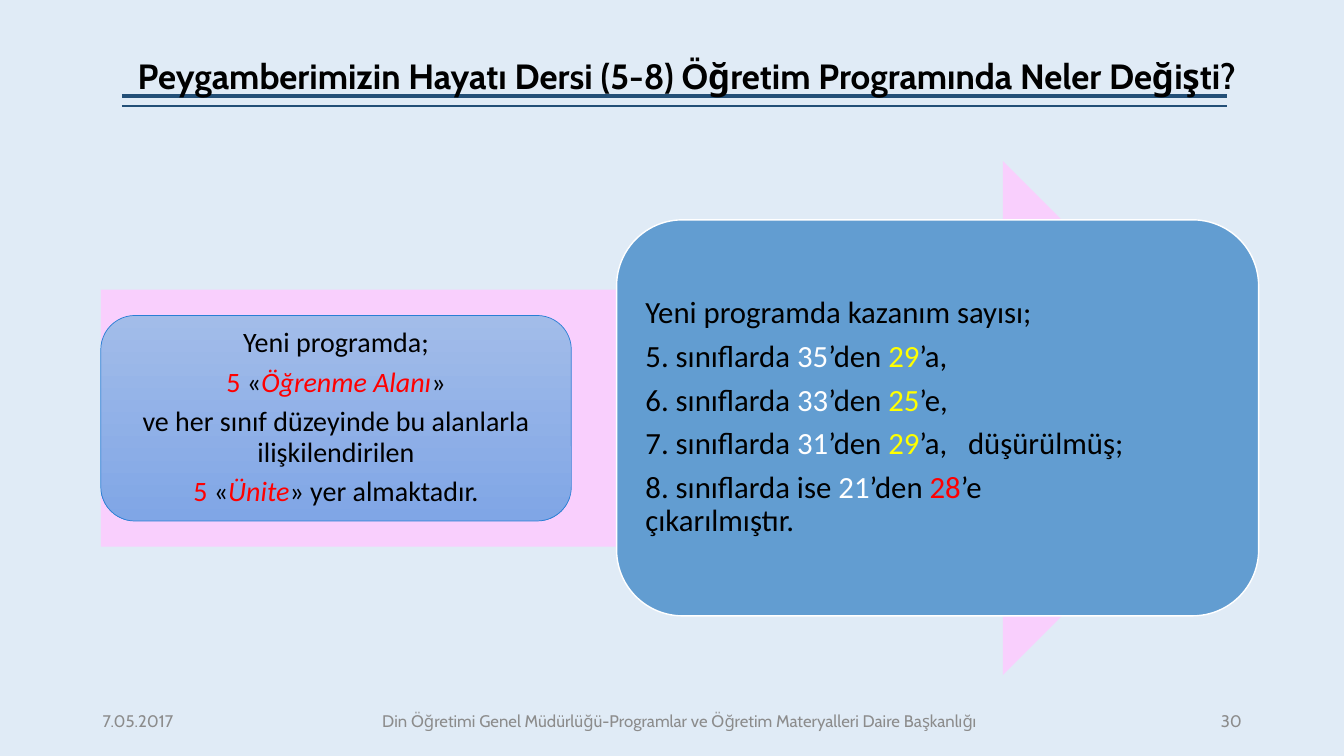
from lxml.etree import SubElement
from pptx import Presentation
from pptx.dml.color import RGBColor
from pptx.enum.shapes import MSO_CONNECTOR, MSO_SHAPE
from pptx.enum.text import MSO_ANCHOR, MSO_AUTO_SIZE, PP_ALIGN
from pptx.oxml.ns import qn
from pptx.util import Cm, Pt

PALE_BLUE = RGBColor(0xE0, 0xEB, 0xF6)
NAVY = RGBColor(0x23, 0x4F, 0x77)
PINK = RGBColor(0xF9, 0xCF, 0xFD)
LIGHT_BLUE = RGBColor(0xA2, 0xBC, 0xE9)
SOFT_BLUE = RGBColor(0x80, 0xA6, 0xE6)
EDGE_BLUE = RGBColor(0x29, 0x7F, 0xD5)
MID_BLUE = RGBColor(0x62, 0x9D, 0xD1)
GREY = RGBColor(0x8C, 0x8C, 0x8C)
BLACK = RGBColor(0, 0, 0)
WHITE = RGBColor(0xFF, 0xFF, 0xFF)
RED = RGBColor(0xFF, 0, 0)
YELLOW = RGBColor(0xFF, 0xFF, 0)


def write_text(shape, paragraphs, *, font, size, color=BLACK, bold=False,
               align=PP_ALIGN.LEFT, anchor=MSO_ANCHOR.MIDDLE, inset=None,
               spacing=1.0, gap=0, tight=1, tab=None):
    """Fill a shape; a paragraph is a list of (text, colour, italic) spans,
    where colour and italic may be left out. The last `tight` paragraphs
    have no gap below them."""
    frame = shape.text_frame
    frame.word_wrap = True
    frame.auto_size = MSO_AUTO_SIZE.NONE
    frame.vertical_anchor = anchor
    if inset is not None:
        frame.margin_left = frame.margin_right = inset
        frame.margin_top = frame.margin_bottom = inset
    for index, spans in enumerate(paragraphs):
        para = frame.add_paragraph() if index else frame.paragraphs[0]
        para.alignment = align
        para.line_spacing = spacing
        para.space_before = Pt(0)
        para.space_after = Pt(gap if index < len(paragraphs) - tight else 0)
        if tab is not None:
            stops = SubElement(para._p.get_or_add_pPr(), qn("a:tabLst"))
            SubElement(stops, qn("a:tab"), pos=str(int(tab)), algn="l")
        for text, *style in spans:
            span = para.add_run()
            span.text = text
            span.font.name = font
            span.font.size = Pt(size)
            span.font.bold = bold
            span.font.color.rgb = style[0] if style else color
            span.font.italic = len(style) > 1 and style[1]


def add_rule(page, top, width):
    rule = page.shapes.add_connector(
        MSO_CONNECTOR.STRAIGHT, Cm(3.07), top, Cm(30.91), top)
    rule.line.color.rgb = NAVY
    rule.line.width = Pt(width)
    SubElement(rule._element.spPr, qn("a:effectLst"))


def add_block(page, kind, left, top, width, height, *, fill, edge=None, edge_width=1):
    """Add a preset shape; two fill colours make a top-to-bottom gradient."""
    block = page.shapes.add_shape(kind, left, top, width, height)
    block.shadow.inherit = False
    if len(fill) == 1:
        block.fill.solid()
        block.fill.fore_color.rgb = fill[0]
    else:
        block.fill.gradient()
        block.fill.gradient_angle = 270
        for stop, color in zip(block.fill.gradient_stops, fill):
            stop.color.rgb = color
    if edge is None:
        block.line.fill.background()
    else:
        block.line.color.rgb = edge
        block.line.width = Pt(edge_width)
    return block


def add_title(page, text):
    title = page.shapes.title
    title.left, title.top, title.width, title.height = Cm(3.07), Cm(0.41), Cm(28.47), Cm(2.13)
    write_text(title, [[(text,)]], font="Cabin", size=25, bold=True, spacing=0.9,
               align=PP_ALIGN.CENTER, anchor=MSO_ANCHOR.BOTTOM, inset=Cm(0.1))
    page.shapes._spTree.append(title._element)


def add_footer(page, text, left, width, align):
    box = page.shapes.add_textbox(left, Cm(17.65), width, Cm(1.02))
    write_text(box, [[(text,)]], font="Cabin", size=12, color=GREY, align=align)


def outcome_change(grade, before, after, ending, color=YELLOW):
    return [(grade + " ",), (before, WHITE), ("’den ",), (after, color), (ending,)]


def main():
    deck = Presentation()
    deck.slide_width, deck.slide_height = Cm(33.87), Cm(19.05)
    page = deck.slides.add_slide(deck.slide_layouts[5])
    page.background.fill.solid()
    page.background.fill.fore_color.rgb = PALE_BLUE

    add_rule(page, Cm(2.41), 3)
    add_rule(page, Cm(2.67), 1)
    add_title(page, "Peygamberimizin Hayatı Dersi (5-8) Öğretim Programında Neler Değişti?")

    add_block(page, MSO_SHAPE.RIGHT_ARROW, Cm(2.54), Cm(4.06), Cm(29.21), Cm(12.95),
              fill=[PINK])
    units = add_block(page, MSO_SHAPE.ROUNDED_RECTANGLE, Cm(2.54), Cm(7.95), Cm(11.86),
                      Cm(5.18), fill=[LIGHT_BLUE, SOFT_BLUE], edge=EDGE_BLUE, edge_width=0.5)
    write_text(units, [
        [("Yeni programda;",)],
        [("5 ", RED), ("«",), ("Öğrenme Alanı", RED, True), ("»",)],
        [("ve her sınıf düzeyinde bu alanlarla ilişkilendirilen",)],
        [("5", RED), (" «",), ("Ünite", RED, True), ("» yer almaktadır.",)],
    ], font="Calibri", size=20, align=PP_ALIGN.CENTER, inset=Cm(0.2), spacing=0.9, gap=6.6)

    outcomes = add_block(page, MSO_SHAPE.ROUNDED_RECTANGLE, Cm(15.54), Cm(5.54), Cm(16.18),
                         Cm(9.98), fill=[MID_BLUE], edge=WHITE)
    write_text(outcomes, [
        [("Yeni programda kazanım sayısı;",)],
        outcome_change("5. sınıflarda", "35", "29", "’a,"),
        outcome_change("6. sınıflarda", "33", "25", "’e,"),
        outcome_change("7. sınıflarda", "31", "29", "’a,\tdüşürülmüş;"),
        outcome_change("8. sınıflarda ise", "21", "28", "’e", RED),
        [("çıkarılmıştır.",)],
    ], font="Calibri", size=22, inset=Cm(0.24), spacing=0.9, gap=7.5, tight=2, tab=Cm(8.13))

    add_footer(page, "7.05.2017", Cm(2.34), Cm(3.18), PP_ALIGN.LEFT)
    add_footer(page, "Din Öğretimi Genel Müdürlüğü-Programlar ve Öğretim Materyalleri "
               "Daire Başkanlığı", Cm(6.35), Cm(21.56), PP_ALIGN.CENTER)
    add_footer(page, "30", Cm(28.6), Cm(2.95), PP_ALIGN.RIGHT)
    deck.save("out.pptx")


if __name__ == "__main__":
    main()
